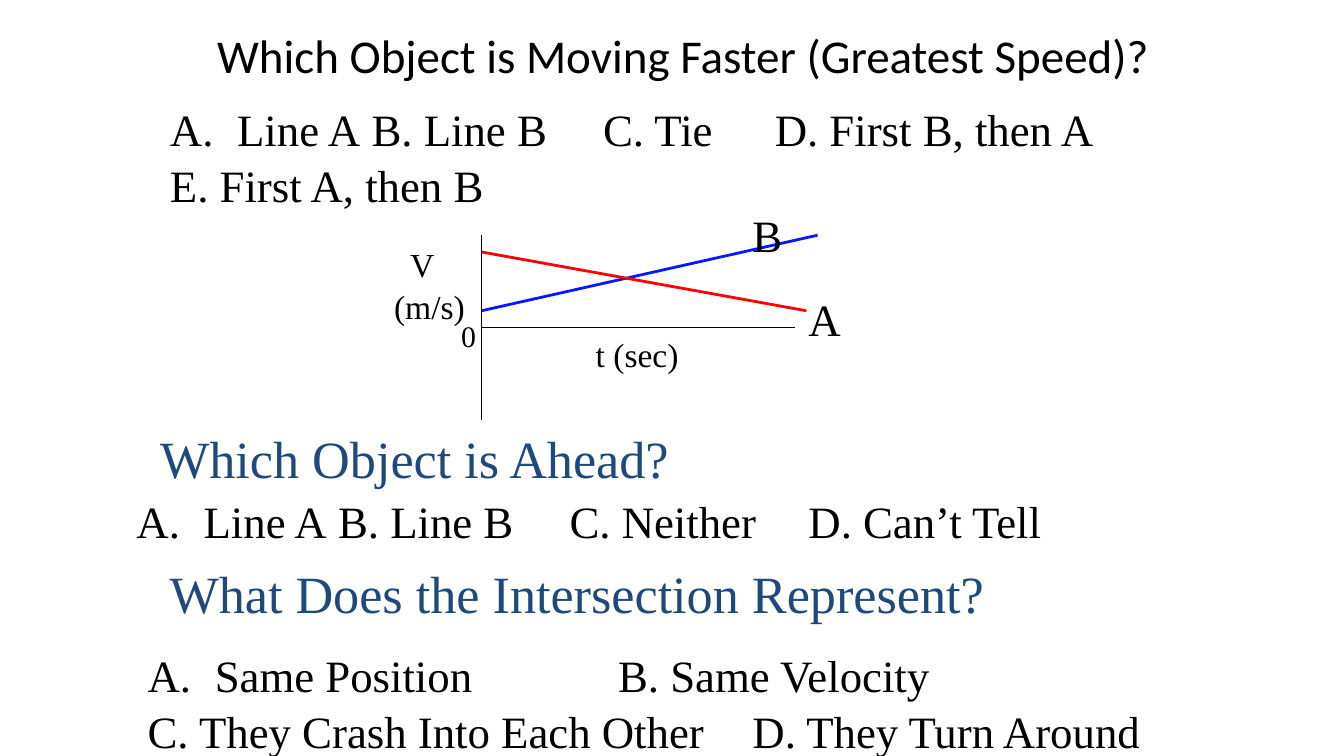
from dataclasses import dataclass

from lxml import etree
from pptx import Presentation
from pptx.dml.color import RGBColor as RGB
from pptx.enum.shapes import MSO_CONNECTOR as Conn
from pptx.enum.text import MSO_ANCHOR as Anchor, MSO_AUTO_SIZE as Fit, PP_ALIGN as Align
from pptx.oxml.ns import qn
from pptx.util import Inches, Pt


@dataclass(frozen=True)
class Theme:
    sans: str = "Calibri"
    serif: str = "Times New Roman"
    ink: str = "000000"
    head: str = "1F497D"
    blue: str = "0718FF"
    red: str = "FA0303"
    title: float = 25.2
    ask: float = 28
    body: float = 24
    axis: float = 18
    zero: float = 16
    leading: float = 1.05


T = Theme()
COL, ROW = Inches(1 / 12), Inches(1 / 16)
GAP = "|"  # a widened space between two answers

deck = Presentation()
deck.slide_width, deck.slide_height = 120 * COL, 90 * ROW
slide = deck.slides.add_slide(deck.slide_layouts[5])


def write(box, lines, size=T.body, font=T.serif, color=T.ink, center=False,
          wrap=True, hang=(), number=False, inset=0):
    """Fill box; hang lists the hanging lines, number letters the first line,
    and inset moves the first line right."""
    frame = box.text_frame
    frame.word_wrap = wrap
    frame.auto_size = Fit.NONE
    frame.vertical_anchor = Anchor.MIDDLE if center else Anchor.TOP
    for i, line in enumerate(lines):
        para = frame.paragraphs[0] if i == 0 else frame.add_paragraph()
        para.alignment = Align.CENTER if center else Align.LEFT
        if len(lines) > 1:
            para.line_spacing = T.leading
        props = para._p.get_or_add_pPr()
        if i in hang:
            props.set("marL", str(Inches(0.5)))
            props.set("indent", str(-Inches(0.5)))
        elif i == 0 and inset:
            props.set("marL", str(Inches(inset)))
        if number and i == 0:
            etree.SubElement(props, qn("a:buFontTx"))
            etree.SubElement(props, qn("a:buAutoNum"), type="alphaUcPeriod")
        left, gap, right = line.partition(GAP)
        for part in filter(None, (left, gap, right)):
            run = para.add_run()
            run.text = " " if part == GAP else part
            run.font.name, run.font.size = font, Pt(size)
            run.font.color.rgb = RGB.from_string(color)
            if part == GAP:
                run._r.get_or_add_rPr().set("spc", "2400")


# Title
title = slide.shapes.title
title.left, title.top, title.width, title.height = 10 * COL, 3 * ROW, 102 * COL, 7 * ROW
write(title, ["Which Object is Moving Faster (Greatest Speed)?"],
      size=T.title, font=T.sans, center=True)

# Questions and answers: column, row, width, height, lines, format
ask = dict(size=T.ask, color=T.head, center=True)
blocks = [
    (14, 11, 95, 14.5, ["Line A\tB. Line B|C. Tie\tD. First B, then A",
                        "E. First A, then B"], dict(hang=(0,), number=True)),
    (3, 51, 68, 7, ["Which Object is Ahead?"], ask),
    (11, 58, 100, 8, ["Line A\tB. Line B|C. Neither\tD. Can’t Tell"],
     dict(hang=(0,), number=True)),
    (10, 67, 83, 7, ["What Does the Intersection Represent?"], ask),
    (12, 76, 100, 14.5, ["Same Position\t\t\tB. Same Velocity",
                         "C. They Crash Into Each Other\tD. They Turn Around"],
     dict(hang=(0, 1), number=True)),
]
for x, y, w, h, lines, style in blocks:
    box = slide.shapes.add_textbox(int(x * COL), int(y * ROW), int(w * COL), int(h * ROW))
    write(box, lines, **style)

# Velocity graph: two axes, two tracks, then the labels
graph = slide.shapes.add_group_shape().shapes
strokes = [
    (43, 28, 43, 50, T.ink, 0.75),
    (43, 39, 71, 39, T.ink, 0.75),
    (43, 37, 73, 28, T.blue, 1.5),
    (43, 30, 72, 37, T.red, 1.5),
]
for x1, y1, x2, y2, color, width in strokes:
    line = graph.add_connector(Conn.STRAIGHT, x1 * COL, y1 * ROW, x2 * COL, y2 * ROW)
    line.line.color.rgb = RGB.from_string(color)
    line.line.width = Pt(width)
    etree.SubElement(line._element.spPr, qn("a:effectLst"))

labels = [
    (34, 28, 10, 11.4, ["V", "(m/s)"], dict(size=T.axis, inset=0.12)),
    (52, 39, 10, 6.4, ["t (sec)"], dict(size=T.axis, wrap=False)),
    (40, 37, 3.7, 5.9, ["0"], dict(size=T.zero, wrap=False)),
    (66, 24, 5.2, 8.2, ["B"], dict(wrap=False)),
    (71, 34, 5.4, 8.2, ["A"], dict(wrap=False)),
]
for x, y, w, h, lines, style in labels:
    box = graph.add_textbox(int(x * COL), int(y * ROW), int(w * COL), int(h * ROW))
    write(box, lines, **style)

deck.save("out.pptx")
